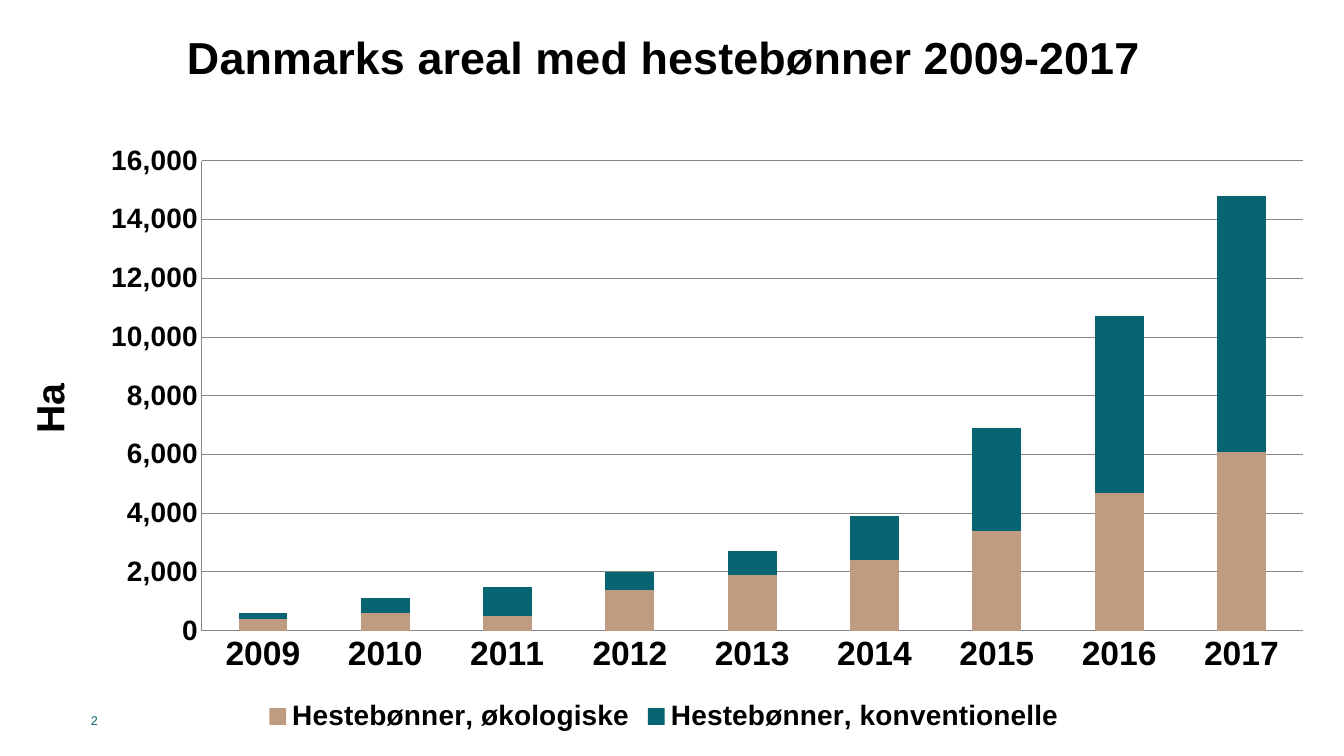
from lxml import etree
from pptx import Presentation
from pptx.chart.data import CategoryChartData
from pptx.dml.color import RGBColor
from pptx.enum.chart import XL_CHART_TYPE, XL_LEGEND_POSITION, XL_TICK_MARK
from pptx.enum.text import PP_ALIGN
from pptx.oxml.ns import qn
from pptx.util import Inches, Pt

STACKED = XL_CHART_TYPE.COLUMN_STACKED
BOTTOM = XL_LEGEND_POSITION.BOTTOM
NO_TICKS = XL_TICK_MARK.NONE
RIGHT = PP_ALIGN.RIGHT

TITLE = "Danmarks areal med hestebønner 2009-2017"
AXIS_TITLE = "Ha"
SLIDE_NUMBER = "2"
YEARS = [str(year) for year in range(2009, 2018)]
SERIES = [
    ("Hestebønner, økologiske", "organic",
     [400, 600, 500, 1400, 1900, 2400, 3400, 4700, 6100]),
    ("Hestebønner, konventionelle", "conventional",
     [200, 500, 1000, 600, 800, 1500, 3500, 6000, 8700]),
]
COLORS = {"organic": "BF9C81", "conventional": "076471",
          "text": "000000", "line": "868686"}
FONT = "Arial"
WIDTH, HEIGHT = 13.33, 7.5
CHART_SIZE = (13.17, 7.32)
# Shares of the chart's size
PLOT_AREA = {"x": 0.152, "y": 0.218, "w": 0.829, "h": 0.637}


def color(name):
    return RGBColor.from_string(COLORS[name])


def style_font(font, size, color_name="text", bold=True):
    font.name = FONT
    font.size = Pt(size)
    font.bold = bold
    font.color.rgb = color(color_name)


def set_title(owner, text, size):
    """Give a chart or an axis a styled title."""
    frame = (owner.chart_title if hasattr(owner, "chart_title")
             else owner.axis_title).text_frame
    frame.text = text
    style_font(frame.paragraphs[0].font, size)


def style_line(line):
    line.color.rgb = color("line")
    line.width = Pt(0.75)


def place_plot_area(chart):
    """Fix the inner plot area, without axis labels, by shares of the chart."""
    plot_area = chart.plots[0]._element.getparent()
    for old_layout in plot_area.findall(qn("c:layout")):
        plot_area.remove(old_layout)
    layout = etree.Element(qn("c:layout"))
    manual = etree.SubElement(layout, qn("c:manualLayout"))
    settings = {"layoutTarget": "inner", "xMode": "edge", "yMode": "edge", **PLOT_AREA}
    for name, value in settings.items():
        etree.SubElement(manual, qn(f"c:{name}")).set("val", str(value))
    plot_area.insert(0, layout)


def add_area_chart(slide):
    data = CategoryChartData(number_format="#,##0")
    data.categories = YEARS
    for name, _, values in SERIES:
        data.add_series(name, values)
    chart = slide.shapes.add_chart(
        STACKED, 0, 0, *map(Inches, CHART_SIZE), data).chart
    style_font(chart.font, 10, bold=False)
    set_title(chart, TITLE, 32)
    chart.chart_title.include_in_layout = False

    plot = chart.plots[0]
    plot.gap_width, plot.overlap = 150, 100
    plot.vary_by_categories = False
    for series, (_, color_name, _) in zip(plot.series, SERIES):
        series.format.fill.solid()
        series.format.fill.fore_color.rgb = color(color_name)

    for axis, size in ((chart.category_axis, 24), (chart.value_axis, 20)):
        style_font(axis.tick_labels.font, size)
        axis.major_tick_mark = axis.minor_tick_mark = NO_TICKS
        style_line(axis.format.line)
    value_axis = chart.value_axis
    value_axis.minimum_scale, value_axis.maximum_scale = 0, 16000
    value_axis.major_unit = 2000
    value_axis.tick_labels.number_format = "#,##0"
    value_axis.tick_labels.number_format_is_linked = False
    style_line(value_axis.major_gridlines.format.line)
    set_title(value_axis, AXIS_TITLE, 28)

    chart.has_legend = True
    chart.legend.position = BOTTOM
    chart.legend.include_in_layout = False
    style_font(chart.legend.font, 20)
    place_plot_area(chart)


def add_slide_number(slide):
    box = slide.shapes.add_textbox(0, Inches(7.09), Inches(0.97), Inches(0.4))
    frame = box.text_frame
    frame.word_wrap = True
    frame.margin_left = frame.margin_right = 0
    frame.margin_top = frame.margin_bottom = 0
    paragraph = frame.paragraphs[0]
    paragraph.text = SLIDE_NUMBER
    paragraph.alignment = RIGHT
    paragraph.line_spacing = 0.92
    style_font(paragraph.font, 9, "conventional", bold=False)


def main():
    presentation = Presentation()
    presentation.slide_width = Inches(WIDTH)
    presentation.slide_height = Inches(HEIGHT)
    slide = presentation.slides.add_slide(presentation.slide_layouts[6])
    add_slide_number(slide)
    add_area_chart(slide)
    presentation.save("out.pptx")


if __name__ == "__main__":
    main()
